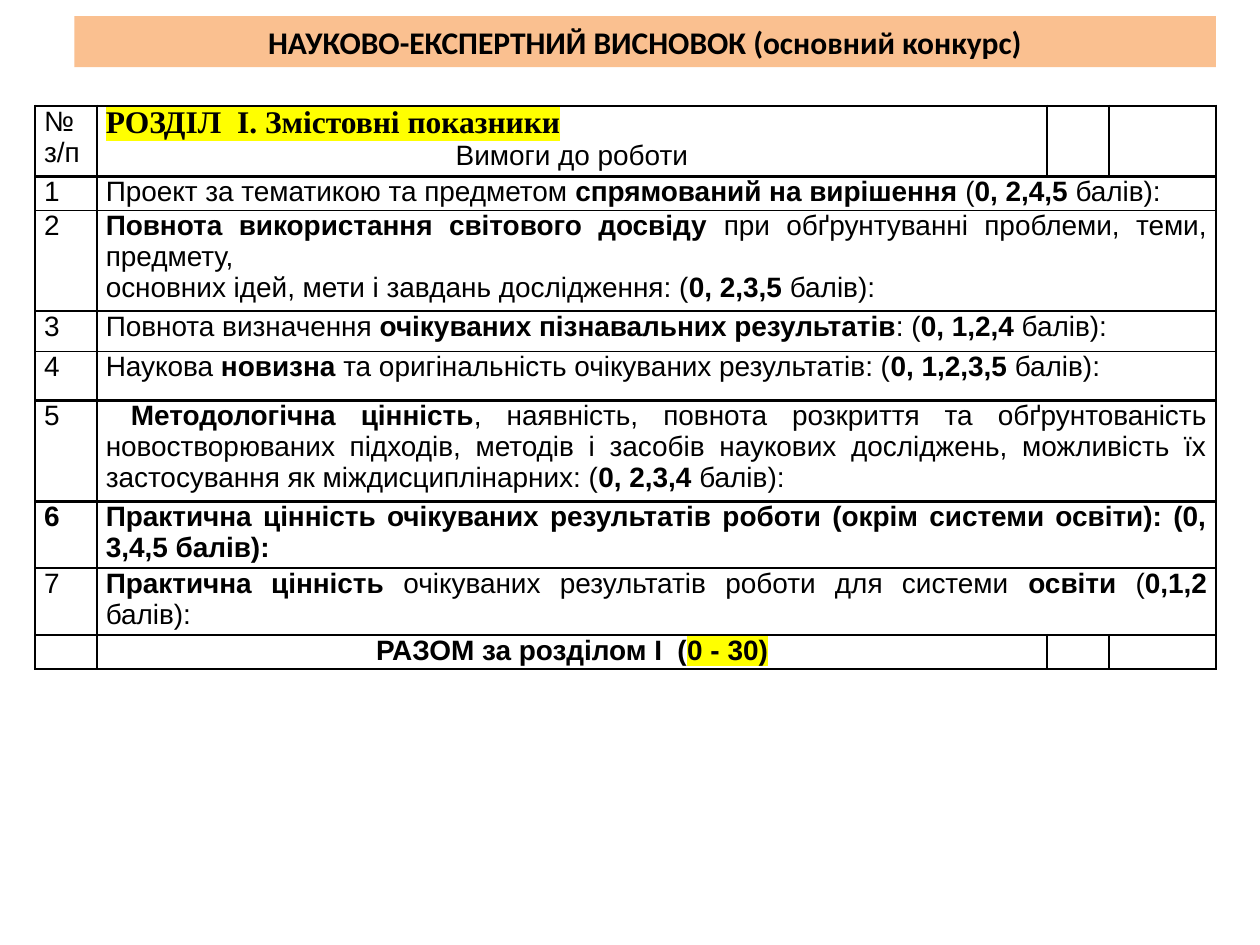
from collections import namedtuple

from pptx import Presentation
from pptx.dml.color import RGBColor
from pptx.enum.text import MSO_ANCHOR, MSO_AUTO_SIZE, PP_ALIGN
from pptx.oxml.ns import qn
from pptx.util import Inches, Pt
from lxml.etree import SubElement

BLACK = RGBColor(0x00, 0x00, 0x00)
PEACH = RGBColor(0xFA, 0xC0, 0x90)
YELLOW = RGBColor(0xFF, 0xFF, 0x00)

Box = namedtuple("Box", "left top width height")
Run = namedtuple("Run", "text bold marked font size", defaults=(False, False, "Arial", 16))
Line = namedtuple("Line", "runs align indent", defaults=(PP_ALIGN.JUSTIFY, 0))

TITLE = "НАУКОВО-ЕКСПЕРТНИЙ ВИСНОВОК (основний конкурс)"
COLUMN_WIDTHS = (0.49, 7.54, 0.49, 0.85)
ROW_HEIGHTS = (0.56, 0.27, 0.8, 0.32, 0.39, 0.8, 0.53, 0.53, 0.27)
THIN_RULES_BELOW = (1, 3)
HANGING = 0.08


def bold(text, **style):
    return Run(text, bold=True, **style)


HEADER = [
    [Line([Run("№")]), Line([Run("з/п")])],
    [Line([bold("РОЗДІЛ  І. Змістовні показники", marked=True,
                font="Times New Roman", size=18)]),
     Line([Run("Вимоги до роботи")], PP_ALIGN.CENTER)],
]
CRITERIA = [
    [Line([Run("Проект за тематикою та предметом "), bold("спрямований на вирішення"),
           Run(" ("), bold("0, 2,4,5 "), Run("балів):")])],
    [Line([bold("Повнота використання світового досвіду"),
           Run(" при обґрунтуванні проблеми, теми, предмету,")]),
     Line([Run("основних ідей, мети і завдань дослідження: ("),
           bold("0, 2,3,5 "), Run("балів):")])],
    [Line([Run("Повнота визначення "), bold("очікуваних пізнавальних результатів"),
           Run(": ("), bold("0, 1,2,4 "), Run("балів):")])],
    [Line([Run("Наукова "), bold("новизна"),
           Run(" та оригінальність очікуваних результатів: ("),
           bold("0, 1,2,3,5 "), Run("балів):")])],
    [Line([Run(" "), bold("Методологічна цінність"),
           Run(", наявність, повнота розкриття та обґрунтованість новостворюваних "
               "підходів, методів і засобів наукових досліджень, можливість їх "
               "застосування як міждисциплінарних: ("),
           bold("0, 2,3,4 "), Run("балів):")])],
    [Line([bold("Практична цінність очікуваних результатів роботи "
                "(окрім системи освіти): (0, 3,4,5 балів):")])],
    [Line([bold("Практична цінність"),
           Run(" очікуваних результатів роботи для системи "),
           bold("освіти "), Run("("), bold("0,1,2 "), Run("балів):")])],
]
BOLD_NUMBER = 6
TOTAL = [Line([bold("РАЗОМ за розділом І  ("), bold("0 - 30)", marked=True)],
              PP_ALIGN.CENTER, HANGING)]


def add_run(paragraph, part):
    run = paragraph.add_run()
    run.text = part.text
    run.font.size = Pt(part.size)
    run.font.bold = part.bold
    run.font.color.rgb = BLACK
    if part.marked:
        highlight = SubElement(run.font._element, qn("a:highlight"))
        SubElement(highlight, qn("a:srgbClr"), val=str(YELLOW))
    run.font.name = part.font


def write_lines(frame, lines):
    for index, line in enumerate(lines):
        paragraph = frame.paragraphs[0] if index == 0 else frame.add_paragraph()
        paragraph.alignment = line.align
        if line.indent:
            properties = paragraph._p.get_or_add_pPr()
            properties.set("marL", str(Inches(line.indent)))
            properties.set("indent", str(-Inches(line.indent)))
        for part in line.runs:
            add_run(paragraph, part)


def format_cell(cell, top, bottom):
    """Clear the fill, draw the borders and keep an empty cell as low as its row."""
    cell.margin_left = cell.margin_right = Inches(0.07)
    cell.margin_top = cell.margin_bottom = 0
    cell.vertical_anchor = MSO_ANCHOR.TOP
    properties = cell._tc.get_or_add_tcPr()
    for side, width in (("L", 1.5), ("R", 1.5), ("T", top), ("B", bottom)):
        border = SubElement(properties, qn(f"a:ln{side}"), w=str(Pt(width)))
        fill = SubElement(border, qn("a:solidFill"))
        SubElement(fill, qn("a:srgbClr"), val=str(BLACK))
    cell.fill.background()
    if not cell.text_frame.text:
        SubElement(cell.text_frame.paragraphs[0]._p, qn("a:endParaRPr"), sz="1600")


def place_title(slide, box):
    title = slide.shapes.title
    title.left, title.top, title.width, title.height = box
    title.fill.solid()
    title.fill.fore_color.rgb = PEACH
    title.text_frame.auto_size = MSO_AUTO_SIZE.NONE
    title.text_frame.vertical_anchor = MSO_ANCHOR.MIDDLE
    write_lines(title.text_frame,
                [Line([bold(TITLE, font="Calibri", size=18)], PP_ALIGN.CENTER)])


def place_score_table(slide, box):
    table = slide.shapes.add_table(len(ROW_HEIGHTS), len(COLUMN_WIDTHS), *box).table
    table.first_row = table.horz_banding = False
    for column, share in zip(table.columns, COLUMN_WIDTHS):
        column.width = int(box.width * share / sum(COLUMN_WIDTHS))
    for row, share in zip(table.rows, ROW_HEIGHTS):
        row.height = int(box.height * share / sum(ROW_HEIGHTS))

    for column, lines in enumerate(HEADER):
        write_lines(table.cell(0, column).text_frame, lines)
    for number, lines in enumerate(CRITERIA, start=1):
        label = Line([Run(str(number), bold=number == BOLD_NUMBER)])
        write_lines(table.cell(number, 0).text_frame, [label])
        criterion = table.cell(number, 1)
        criterion.merge(table.cell(number, len(COLUMN_WIDTHS) - 1))
        write_lines(criterion.text_frame, lines)
    write_lines(table.cell(len(ROW_HEIGHTS) - 1, 1).text_frame, TOTAL)

    for index, row in enumerate(table.rows):
        top = 1 if index - 1 in THIN_RULES_BELOW else 1.5
        bottom = 1 if index in THIN_RULES_BELOW else 1.5
        for cell in row.cells:
            format_cell(cell, top, bottom)


def main():
    deck = Presentation()
    deck.slide_width, deck.slide_height = Inches(10), Inches(7.5)
    title_only = deck.slide_layouts[5]
    slide = deck.slides.add_slide(title_only)

    def share(left, top, width, height):
        return Box(int(deck.slide_width * left), int(deck.slide_height * top),
                   int(deck.slide_width * width), int(deck.slide_height * height))

    place_title(slide, share(0.059, 0.017, 0.906, 0.054))
    place_score_table(slide, share(0.028, 0.112, 0.937, 0.596))
    deck.save("out.pptx")


if __name__ == "__main__":
    main()
